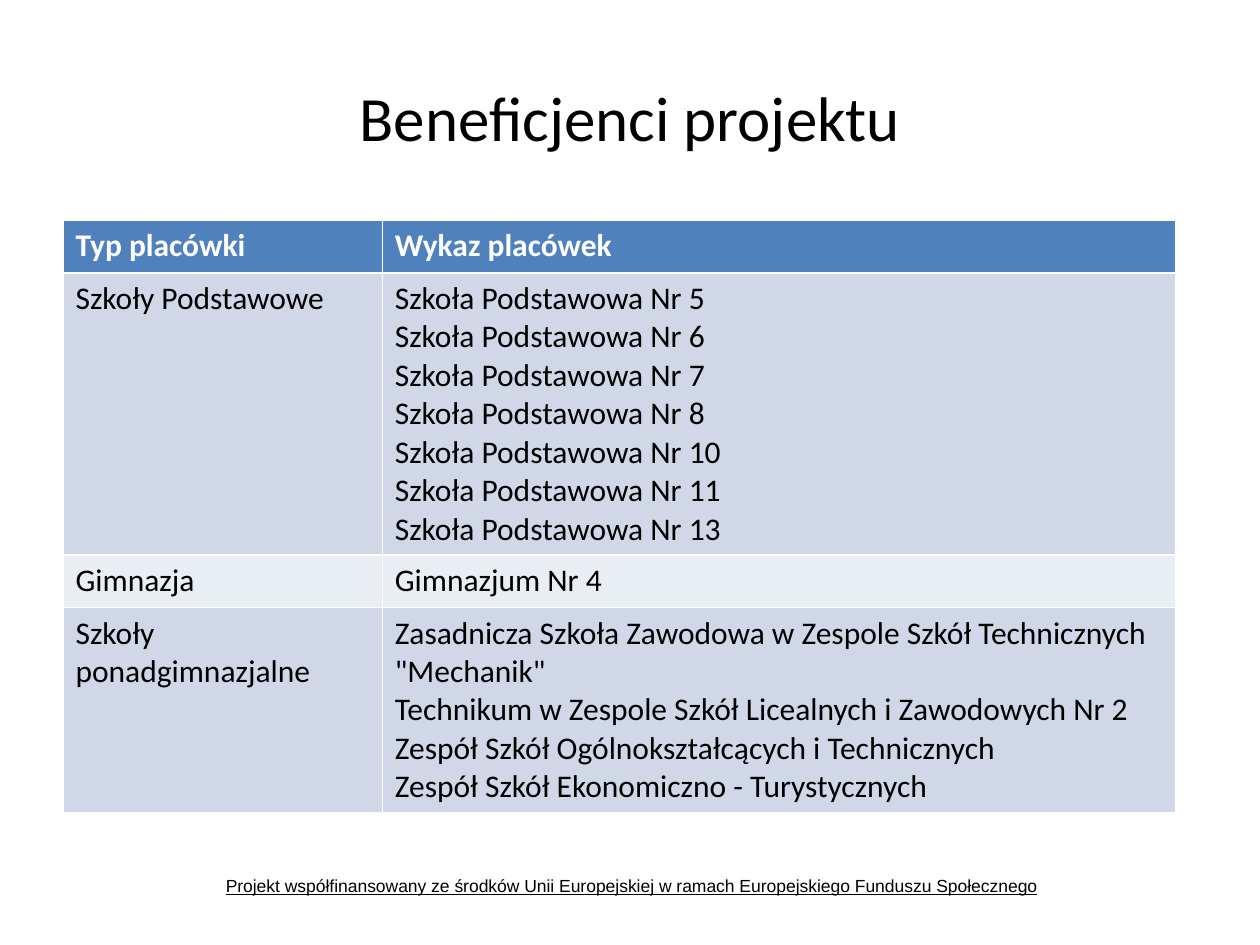
from pptx import Presentation
from pptx.dml.color import RGBColor
from pptx.enum.text import MSO_ANCHOR, PP_ALIGN
from pptx.util import Inches, Pt

MIDDLE = MSO_ANCHOR.MIDDLE
CENTER = PP_ALIGN.CENTER
WIDE, HIGH = Inches(10), Inches(7.5)
TITLE_BOX = (0.05, 0.04, 0.9, 0.167)
TABLE_BOX = (0.05, 0.233, 0.883, 0.224)
FOOT_BOX = (0.051, 0.833, 0.9, 0.167)
SPLIT = 0.287
COLORS = {
    "head": "4F81BD",
    "odd": "D0D8E8",
    "even": "E9EDF4",
    "light": "FFFFFF",
    "dark": "000000",
}
HEADS = ("Typ placówki", "Wykaz placówek")
GROUPS = [
    ("Szkoły Podstawowe",
     [f"Szkoła Podstawowa Nr {n}" for n in (5, 6, 7, 8, 10, 11, 13)]),
    ("Gimnazja", ["Gimnazjum Nr 4"]),
    ("Szkoły ponadgimnazjalne", [
        'Zasadnicza Szkoła Zawodowa w Zespole Szkół Technicznych "Mechanik"',
        "Technikum w Zespole Szkół Licealnych i Zawodowych Nr 2",
        "Zespół Szkół Ogólnokształcących i Technicznych",
        "Zespół Szkół Ekonomiczno - Turystycznych",
    ]),
]
FOOT = ("Projekt współfinansowany ze środków Unii Europejskiej "
        "w ramach Europejskiego Funduszu Społecznego")


def scale(box):
    """Turn shares of the slide into lengths."""
    x, y, w, h = box
    return int(x * WIDE), int(y * HIGH), int(w * WIDE), int(h * HIGH)


def style(frame, size, face="Calibri", color="dark", bold=False, line=False):
    """Format every run of a text frame."""
    for para in frame.paragraphs:
        for run in para.runs:
            font = run.font
            font.name, font.size = face, Pt(size)
            font.bold, font.underline = bold, line
            font.color.rgb = RGBColor.from_string(COLORS[color])


def add_title(slide, box):
    """Place the slide title in its placeholder."""
    title = slide.shapes.title
    title.left, title.top, title.width, title.height = scale(box)
    frame = title.text_frame
    frame.text = "Beneficjenci projektu"
    frame.vertical_anchor = MIDDLE
    frame.paragraphs[0].alignment = CENTER
    style(frame, 36)


def add_schools(slide, box):
    """Place the table of school types and schools."""
    area = scale(box)
    rows = [HEADS] + [(kind, "\n".join(names)) for kind, names in GROUPS]
    table = slide.shapes.add_table(len(rows), len(HEADS), *area).table
    first, last = table.columns
    first.width = int(area[2] * SPLIT)
    last.width = area[2] - first.width
    for r, row in enumerate(rows):
        fill = "head" if r == 0 else "odd" if r % 2 else "even"
        for c, text in enumerate(row):
            cell = table.cell(r, c)
            cell.text_frame.text = text
            cell.fill.solid()
            cell.fill.fore_color.rgb = RGBColor.from_string(COLORS[fill])
            style(cell.text_frame, 18, bold=r == 0,
                  color="dark" if r else "light")


def add_foot(slide, box):
    """Place the funding note at the foot of the slide."""
    frame = slide.shapes.add_textbox(*scale(box)).text_frame
    frame.text = FOOT
    frame.word_wrap = True
    frame.vertical_anchor = MIDDLE
    frame.margin_top = Inches(0.36)
    frame.paragraphs[0].alignment = CENTER
    style(frame, 10, face="Arial", line=True)


def main():
    """Build and save the slide."""
    deck = Presentation()
    deck.slide_width, deck.slide_height = WIDE, HIGH
    slide = deck.slides.add_slide(deck.slide_layouts[5])
    add_title(slide, TITLE_BOX)
    add_schools(slide, TABLE_BOX)
    add_foot(slide, FOOT_BOX)
    deck.save("out.pptx")


if __name__ == "__main__":
    main()
